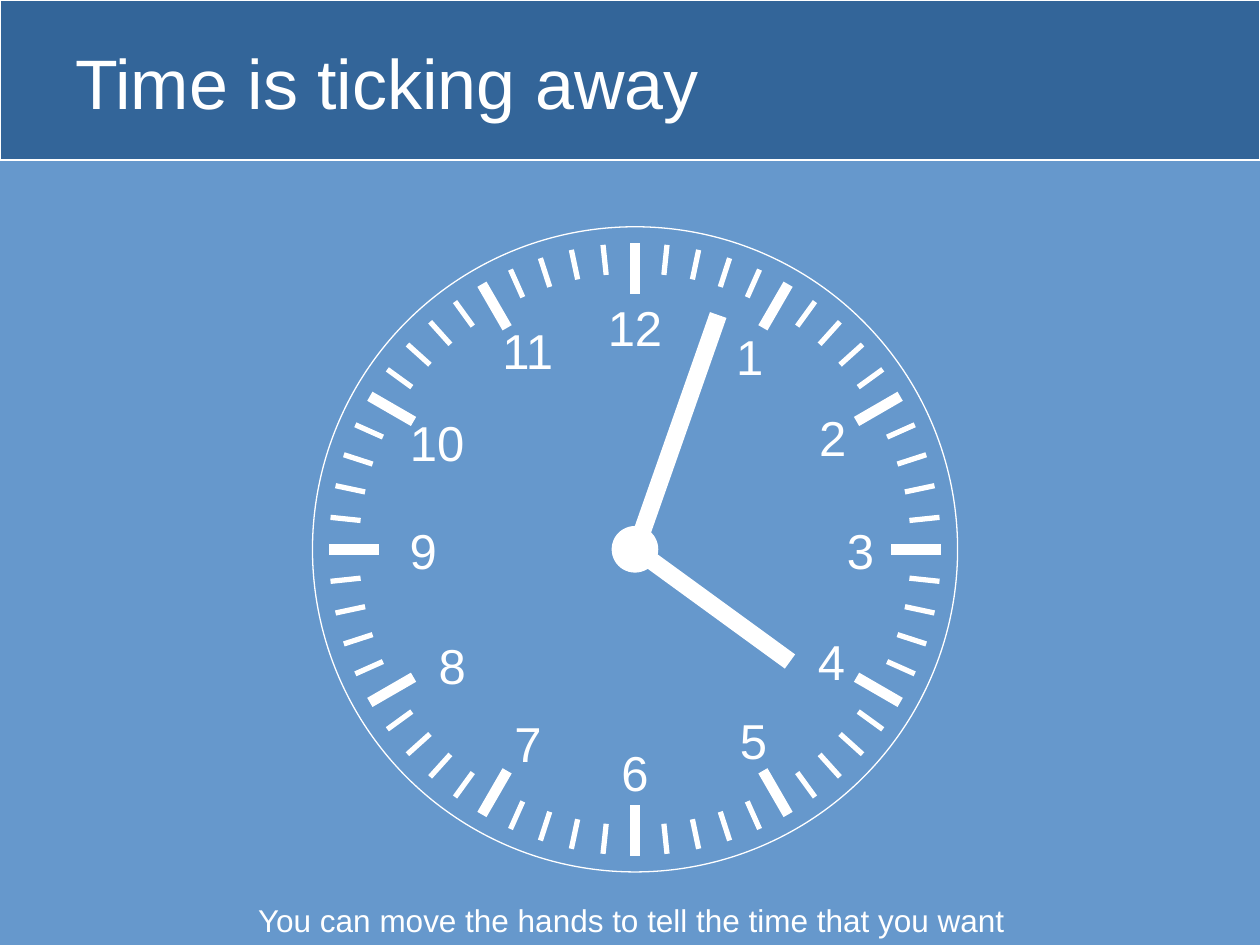
from math import cos, radians, sin

from lxml import etree
from pptx import Presentation
from pptx.dml.color import RGBColor
from pptx.enum.shapes import MSO_CONNECTOR as Connector, MSO_SHAPE as Shape
from pptx.enum.text import MSO_ANCHOR as Anchor, PP_ALIGN as Align
from pptx.oxml.ns import qn
from pptx.util import Inches, Pt

SKY = RGBColor(0x66, 0x98, 0xCC)
NAVY = RGBColor(0x33, 0x65, 0x99)
WHITE = RGBColor(0xFF, 0xFF, 0xFF)
FONT = "Arial"

# Centre of each numeral, in inches from the centre of the clock
NUMERALS = {
    12: (0, -1.77), 1: (0.91, -1.54), 2: (1.57, -0.9), 3: (1.79, 0),
    4: (1.56, 0.88), 5: (0.94, 1.51), 6: (0, 1.76), 7: (-0.85, 1.53),
    8: (-1.45, 0.91), 9: (-1.68, 0), 10: (-1.57, -0.86), 11: (-0.85, -1.59),
}


def add_text(shapes, text, left, top, width, height, size=18, align=Align.LEFT,
             anchor=Anchor.TOP, wrap=True, side_inset=0.1, end_inset=0.05):
    box = shapes.add_textbox(Inches(left), Inches(top), Inches(width), Inches(height))
    frame = box.text_frame
    frame.word_wrap = wrap
    frame.vertical_anchor = anchor
    frame.margin_left = frame.margin_right = Inches(side_inset)
    frame.margin_top = frame.margin_bottom = Inches(end_inset)
    para = frame.paragraphs[0]
    para.alignment = align
    span = para.add_run()
    span.text = text
    span.font.name = FONT
    span.font.size = Pt(size)
    span.font.color.rgb = WHITE


def add_outlined(shapes, kind, left, top, width, height, fill=None):
    shape = shapes.add_shape(kind, Inches(left), Inches(top), Inches(width), Inches(height))
    shape.shadow.inherit = False
    if fill is None:
        shape.fill.background()
    else:
        shape.fill.solid()
        shape.fill.fore_color.rgb = fill
    shape.line.color.rgb = WHITE
    shape.line.width = Pt(0.75)


def add_line(shapes, start, end, weight):
    points = [Inches(value) for value in (*start, *end)]
    line = shapes.add_connector(Connector.STRAIGHT, *points)
    line.line.color.rgb = WHITE
    line.line.width = Pt(weight)
    etree.SubElement(line._element.spPr, qn("a:effectLst"))


def add_header(page, left, top, width, height):
    add_outlined(page.shapes, Shape.RECTANGLE, left, top, width, height, fill=NAVY)
    add_text(page.shapes, "Time is ticking away", left + 0.5, top + 0.21,
             width - 1.13, height - 0.4, size=40, anchor=Anchor.MIDDLE)


def add_clock(page, left, top, size):
    radius = size / 2
    center_x, center_y = left + radius, top + radius
    clock = page.shapes.add_group_shape().shapes

    def rim_point(minute, distance):
        angle = radians(6 * minute)
        return center_x + distance * sin(angle), center_y - distance * cos(angle)

    # Minute ticks, with a longer and heavier one every five minutes
    outer = radius - 0.13
    for minute in range(60):
        length, weight = (0.4, 6) if minute % 5 == 0 else (0.24, 3)
        add_line(clock, rim_point(minute, outer), rim_point(minute, outer - length), weight)

    # Rim, numerals and hub
    add_outlined(clock, Shape.OVAL, left, top, size, size)
    for hour, (shift_x, shift_y) in NUMERALS.items():
        add_text(clock, str(hour), center_x + shift_x - 0.33, center_y + shift_y - 0.16,
                 0.66, 0.33, size=28, align=Align.CENTER, anchor=Anchor.MIDDLE,
                 side_inset=0, end_inset=0)
    add_outlined(clock, Shape.OVAL, center_x - 0.18, center_y - 0.18, 0.36, 0.36, fill=WHITE)

    # Hour hand and minute hand, free to move outside the group
    add_line(page.shapes, (center_x + 0.02, center_y + 0.01),
             (center_x + 1.23, center_y + 0.89), 10)
    add_line(page.shapes, (center_x + 0.66, center_y - 1.86),
             (center_x, center_y + 0.02), 10)


def add_caption(page, left, top, width, height):
    add_text(page.shapes, "You can move the hands to tell the time that you want",
             left, top, width, height, wrap=False)


def main():
    deck = Presentation()
    deck.slide_width, deck.slide_height = Inches(10), Inches(7.5)
    page = deck.slides.add_slide(deck.slide_layouts[6])
    page.background.fill.solid()
    page.background.fill.fore_color.rgb = SKY
    add_header(page, 0, 0, 10, 1.27)
    add_clock(page, 2.48, 1.8, 5.12)
    add_caption(page, 1.95, 7.1, 6.15, 0.4)
    deck.save("out.pptx")


if __name__ == "__main__":
    main()
